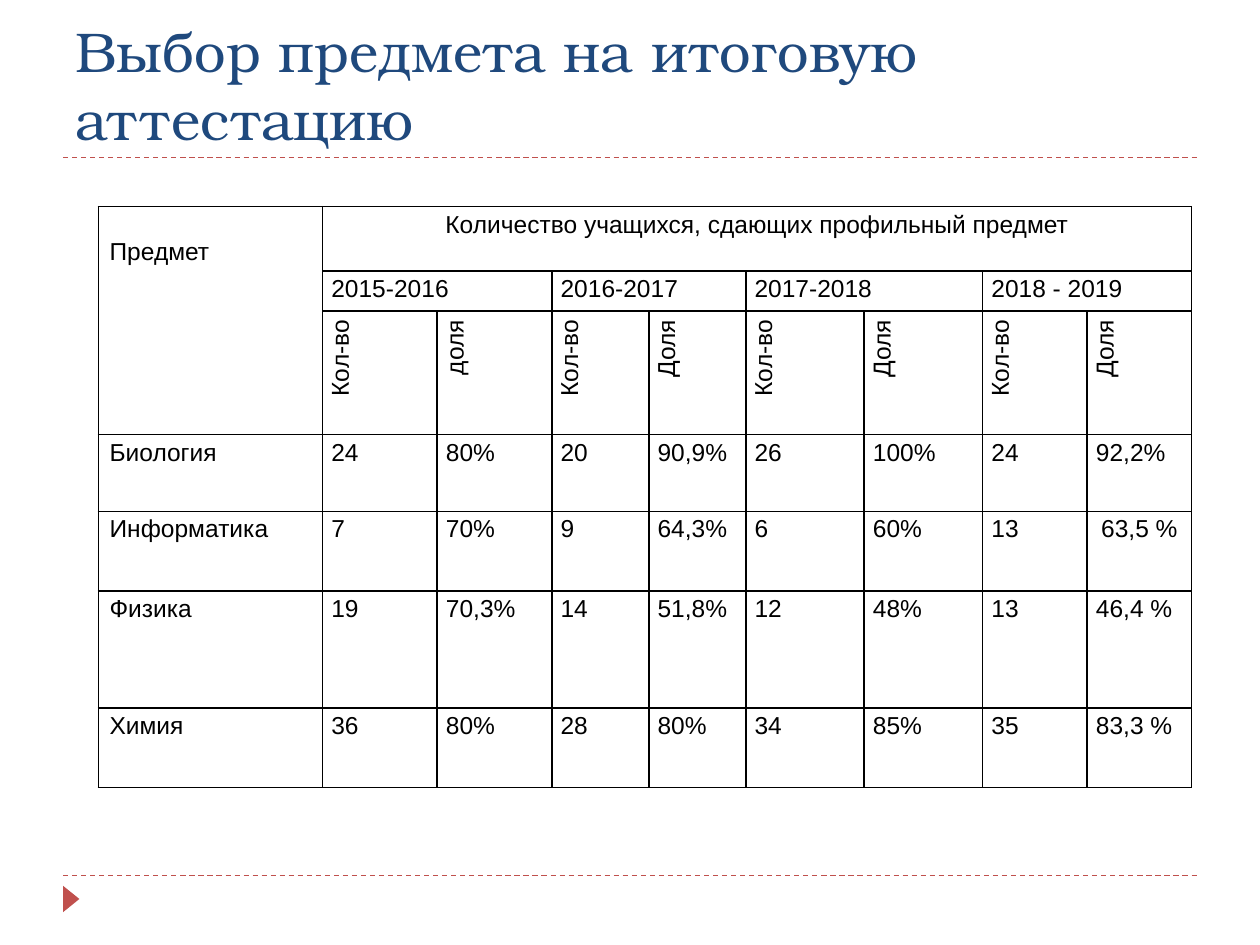
from lxml import etree
from pptx import Presentation
from pptx.dml.color import RGBColor
from pptx.enum.dml import MSO_LINE
from pptx.enum.shapes import MSO_CONNECTOR, MSO_SHAPE
from pptx.enum.text import MSO_ANCHOR, PP_ALIGN
from pptx.oxml import parse_xml
from pptx.oxml.ns import nsdecls, qn
from pptx.util import Inches, Pt

DASH = MSO_LINE.DASH
STRAIGHT = MSO_CONNECTOR.STRAIGHT
TRIANGLE = MSO_SHAPE.ISOSCELES_TRIANGLE
TOP, MIDDLE, BOTTOM = MSO_ANCHOR.TOP, MSO_ANCHOR.MIDDLE, MSO_ANCHOR.BOTTOM
LEFT, CENTER, RIGHT = PP_ALIGN.LEFT, PP_ALIGN.CENTER, PP_ALIGN.RIGHT

NAVY = RGBColor(0x1F, 0x49, 0x7D)
RED = RGBColor(0xC0, 0x50, 0x4D)
BLACK = RGBColor(0, 0, 0)

YEARS = ["2015-2016", "2016-2017", "2017-2018", "2018 - 2019"]
MEASURES = ["Кол-во", "доля"] + ["Кол-во", "Доля"] * 3
RESULTS = [
    ["Биология", "24", "80%", "20", "90,9%", "26", "100%", "24", "92,2%"],
    ["Информатика", "7", "70%", "9", "64,3%", "6", "60%", "13", "63,5 %"],
    ["Физика", "19", "70,3%", "14", "51,8%", "12", "48%", "13", "46,4 %"],
    ["Химия", "36", "80%", "28", "80%", "34", "85%", "35", "83,3 %"],
]
COLUMN_WIDTHS = [1.78, 0.91, 0.91, 0.77, 0.77, 0.94, 0.94, 0.83, 0.83]
ROW_HEIGHTS = [0.51, 0.32, 0.98, 0.61, 0.63, 0.93, 0.63]


class SlideBuilder:
    """Adds styled elements to one slide."""

    title_font, title_size = "TeX Gyre Bonum", Pt(32)
    table_font, table_size = "Arial", Pt(14)

    def __init__(self, slide):
        self.slide = slide

    def rule(self, y):
        rule = self.slide.shapes.add_connector(
            STRAIGHT, Inches(0.5), Inches(y), Inches(9.5), Inches(y))
        rule.line.color.rgb = RED
        rule.line.width = Pt(0.75)
        rule.line.dash_style = DASH
        etree.SubElement(rule._element.spPr, qn("a:effectLst"))

    def marker(self, left, top, width, height):
        marker = self.slide.shapes.add_shape(
            TRIANGLE, Inches(left), Inches(top), Inches(width), Inches(height))
        marker.rotation = 90
        marker.shadow.inherit = False
        marker.fill.solid()
        marker.fill.fore_color.rgb = RED
        marker.line.fill.background()

    def title(self, text, left, top, width, height):
        frame = self.slide.shapes.add_textbox(
            Inches(left), Inches(top), Inches(width), Inches(height)).text_frame
        frame.word_wrap = True
        frame.vertical_anchor = BOTTOM
        frame.text = text
        self.style(frame.paragraphs[0], self.title_font, self.title_size, NAVY)

    def style(self, paragraph, font, size, color):
        for run in paragraph.runs:
            run.font.name = font
            run.font.size = size
            run.font.color.rgb = color

    def table(self, left, top, widths, heights):
        table = self.slide.shapes.add_table(
            len(heights), len(widths), Inches(left), Inches(top),
            Inches(sum(widths)), Inches(sum(heights))).table
        table.first_row = table.horz_banding = False
        for column, width in zip(table.columns, widths):
            column.width = Inches(width)
        for row, height in zip(table.rows, heights):
            row.height = Inches(height)
        for cell in table.iter_cells():
            cell.fill.background()
            self.border(cell)
        return table

    def border(self, cell):
        properties = cell._tc.get_or_add_tcPr()
        for position, side in enumerate(("lnL", "lnR", "lnT", "lnB")):
            properties.insert(position, parse_xml(
                f'<a:{side} {nsdecls("a")} w="{Pt(1)}"><a:solidFill>'
                f'<a:srgbClr val="{BLACK}"/></a:solidFill></a:{side}>'))

    def cell(self, cell, text, align=LEFT, left=0.07, top=0, vertical=False):
        cell.text = text
        cell.margin_left, cell.margin_right = Inches(left), Inches(0.07)
        cell.margin_top, cell.margin_bottom = Inches(top), 0
        cell.vertical_anchor = MIDDLE if vertical else TOP
        if vertical:
            cell._tc.get_or_add_tcPr().set("vert", "vert270")
        paragraph = cell.text_frame.paragraphs[0]
        paragraph.alignment = align
        paragraph.line_spacing = 1.15
        self.style(paragraph, self.table_font, self.table_size, BLACK)


def main():
    presentation = Presentation()
    presentation.slide_width, presentation.slide_height = Inches(10), Inches(7.5)
    builder = SlideBuilder(
        presentation.slides.add_slide(presentation.slide_layouts[6]))
    builder.rule(6.95)
    builder.rule(1.25)
    builder.marker(0.46, 7.07, 0.21, 0.13)
    builder.title("Выбор предмета на итоговую аттестацию", 0.5, 0.25, 9, 1)

    exams = builder.table(0.78, 1.64, COLUMN_WIDTHS, ROW_HEIGHTS)
    exams.cell(0, 0).merge(exams.cell(2, 0))
    exams.cell(0, 1).merge(exams.cell(0, 8))
    builder.cell(exams.cell(0, 0), "Предмет", left=0.09, top=0.22)
    builder.cell(exams.cell(0, 1),
                 "Количество учащихся, сдающих профильный предмет", CENTER)
    for index, year in enumerate(YEARS):
        first = 1 + 2 * index
        exams.cell(1, first).merge(exams.cell(1, first + 1))
        builder.cell(exams.cell(1, first), year)
    for column, measure in enumerate(MEASURES, 1):
        builder.cell(exams.cell(2, column), measure, RIGHT, vertical=True)
    for row, (subject, *values) in enumerate(RESULTS, 3):
        builder.cell(exams.cell(row, 0), subject, left=0.09)
        for column, value in enumerate(values, 1):
            align = CENTER if value == "63,5 %" else LEFT
            builder.cell(exams.cell(row, column), value, align)

    presentation.save("out.pptx")


if __name__ == "__main__":
    main()
